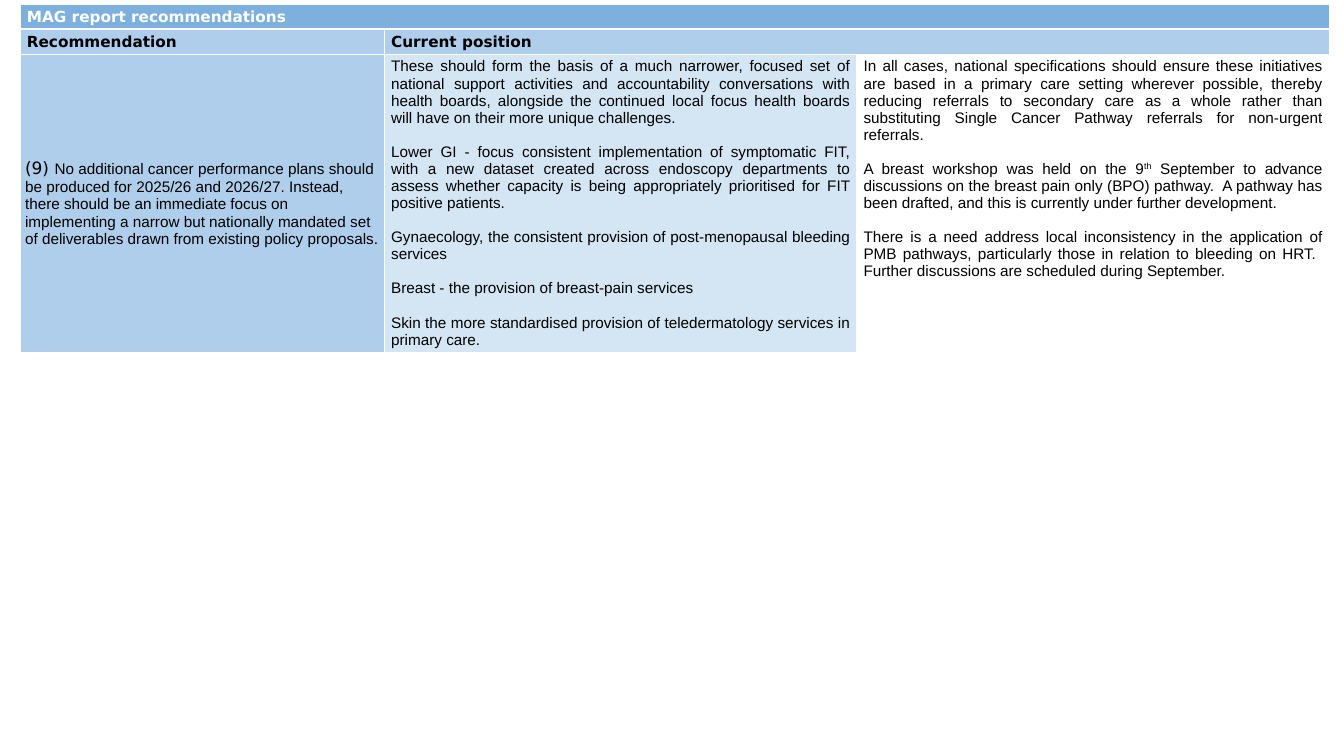
from lxml import etree
from pptx import Presentation, util as u
from pptx.dml.color import RGBColor
from pptx.enum import text
from pptx.oxml import ns

SCALE = 9144
SANS, ARIAL = "DejaVu Sans", "Arial"
WHITE, BLACK = "FFFFFF", "000000"
TITLE_BLUE, LABEL_BLUE, PALE_BLUE = "7EB0DE", "AFCEEB", "D4E5F4"
COLUMNS = [596, 773, 773]
ROWS = [40, 39, 487]
WIDE, NARROW = (11, 6), (8, 4)
LEFT, JUSTIFY = text.PP_ALIGN.LEFT, text.PP_ALIGN.JUSTIFY
TOP, MIDDLE = text.MSO_ANCHOR.TOP, text.MSO_ANCHOR.MIDDLE

RECOMMENDATION = (
    "No additional cancer performance plans should be produced for 2025/26 and 2026/27. "
    "Instead, there should be an immediate focus on implementing a narrow but nationally "
    "mandated set of deliverables drawn from existing policy proposals."
)
PRIORITIES = [
    "These should form the basis of a much narrower, focused set of national support "
    "activities and accountability conversations with health boards, alongside the continued "
    "local focus health boards will have on their more unique challenges.",
    "Lower GI - focus consistent implementation of symptomatic FIT, with a new dataset created "
    "across endoscopy departments to assess whether capacity is being appropriately "
    "prioritised for FIT positive patients.",
    "Gynaecology, the consistent provision of post-menopausal bleeding services",
    "Breast - the provision of breast-pain services",
    "Skin the more standardised provision of teledermatology services in primary care.",
]
SPECIFICATIONS = (
    "In all cases, national specifications should ensure these initiatives are based in a "
    "primary care setting wherever possible, thereby reducing referrals to secondary care as a "
    "whole rather than substituting Single Cancer Pathway referrals for non-urgent referrals."
)
WORKSHOP = (
    " September to advance discussions on the breast pain only (BPO) pathway.  A pathway has "
    "been drafted, and this is currently under further development."
)
INCONSISTENCY = (
    "There is a need address local inconsistency in the application of PMB pathways, "
    "particularly those in relation to bleeding on HRT.  Further discussions are scheduled "
    "during September."
)


def px(length):
    """Turn px into EMU."""
    return u.Emu(length * SCALE)


def color(value):
    """Turn a hex string into a colour."""
    return RGBColor.from_string(value)


def run(words, size=18, font=ARIAL, ink=BLACK, bold=False, baseline=0):
    """Describe one run of text."""
    return dict(words=words, size=size, font=font, ink=ink, bold=bold, baseline=baseline)


def heading(words, ink=BLACK):
    """Describe a heading of one bold paragraph."""
    return [[run(words, font=SANS, ink=ink, bold=True)]]


def add_run(paragraph, style):
    """Add one described run to a paragraph."""
    piece = paragraph.add_run()
    piece.text = style["words"]
    piece.font.size = u.Pt(style["size"])
    piece.font.name = style["font"]
    piece.font.bold = style["bold"]
    piece.font.color.rgb = color(style["ink"])
    if style["baseline"]:
        piece.font._element.set("baseline", str(style["baseline"] * 1000))


def draw_borders(cell, bottom):
    """Give a cell white borders, with its own bottom width in points."""
    properties = cell._tc.get_or_add_tcPr()
    for side, width in (("L", 1), ("R", 1), ("T", 1), ("B", bottom)):
        line = etree.SubElement(properties, ns.qn(f"a:ln{side}"), w=str(u.Pt(width)))
        fill = etree.SubElement(line, ns.qn("a:solidFill"))
        etree.SubElement(fill, ns.qn("a:srgbClr"), val=WHITE)


def fill_cell(cell, fill, paragraphs, align=JUSTIFY, anchor=MIDDLE, insets=WIDE):
    """Set the fill, insets and paragraphs of a cell."""
    cell.fill.solid()
    cell.fill.fore_color.rgb = color(fill)
    cell.vertical_anchor = anchor
    cell.margin_left = cell.margin_right = px(insets[0])
    cell.margin_top = cell.margin_bottom = px(insets[1])
    frame = cell.text_frame
    for index, runs in enumerate(paragraphs):
        paragraph = frame.add_paragraph() if index else frame.paragraphs[0]
        paragraph.alignment = align
        paragraph.space_before = u.Pt(20 if index else 0)
        for style in runs:
            add_run(paragraph, style)


def add_recommendations(slide, left, top):
    """Place the recommendations table with its corner at left, top."""
    table = slide.shapes.add_table(
        len(ROWS), len(COLUMNS), px(left), px(top), px(sum(COLUMNS)), px(sum(ROWS))
    ).table
    table.first_row = table.horz_banding = False
    for column, width in zip(table.columns, COLUMNS):
        column.width = px(width)
    for index, (row, height) in enumerate(zip(table.rows, ROWS)):
        row.height = px(height)
        for cell in row.cells:
            draw_borders(cell, 1 if index else 3)
    table.cell(0, 0).merge(table.cell(0, 2))
    table.cell(1, 1).merge(table.cell(1, 2))

    fill_cell(table.cell(0, 0), TITLE_BLUE, heading("MAG report recommendations", WHITE), LEFT)
    fill_cell(table.cell(1, 0), LABEL_BLUE, heading("Recommendation"))
    fill_cell(table.cell(1, 1), LABEL_BLUE, heading("Current position"))
    recommendation = [[run("(9) ", 20, SANS), run(RECOMMENDATION)]]
    fill_cell(table.cell(2, 0), LABEL_BLUE, recommendation, LEFT, insets=NARROW)
    fill_cell(table.cell(2, 1), PALE_BLUE, [[run(words)] for words in PRIORITIES], anchor=TOP)
    progress = [
        [run(SPECIFICATIONS)],
        [run("A breast workshop was held on the 9"), run("th", baseline=30), run(WORKSHOP)],
        [run(INCONSISTENCY)],
    ]
    fill_cell(table.cell(2, 2), WHITE, progress, anchor=TOP)


def main():
    """Build and save the presentation."""
    presentation = Presentation()
    presentation.slide_width = px(2199)
    presentation.slide_height = px(1237)
    slide = presentation.slides.add_slide(presentation.slide_layouts[6])
    add_recommendations(slide, 33, 7)
    presentation.save("out.pptx")


if __name__ == "__main__":
    main()
